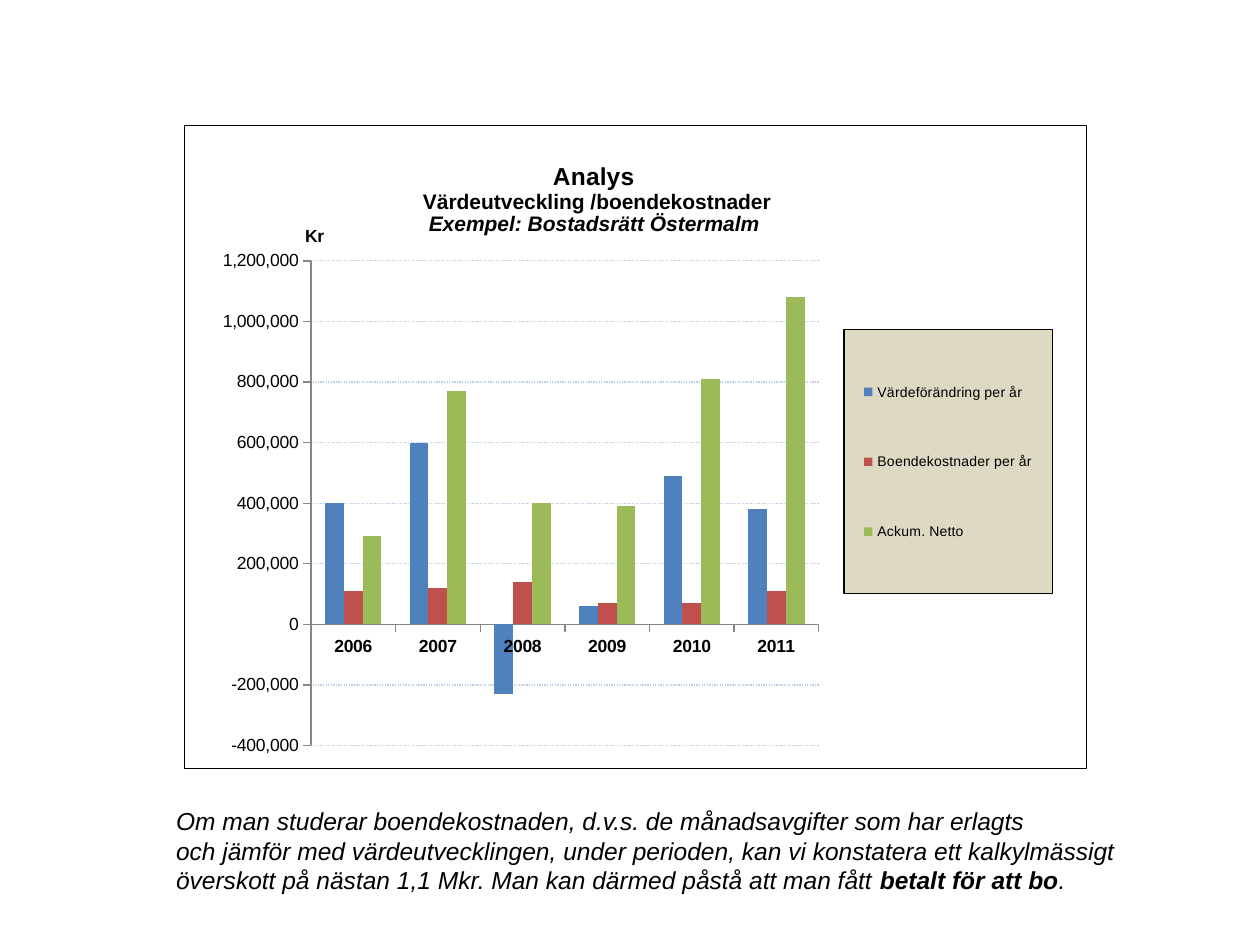
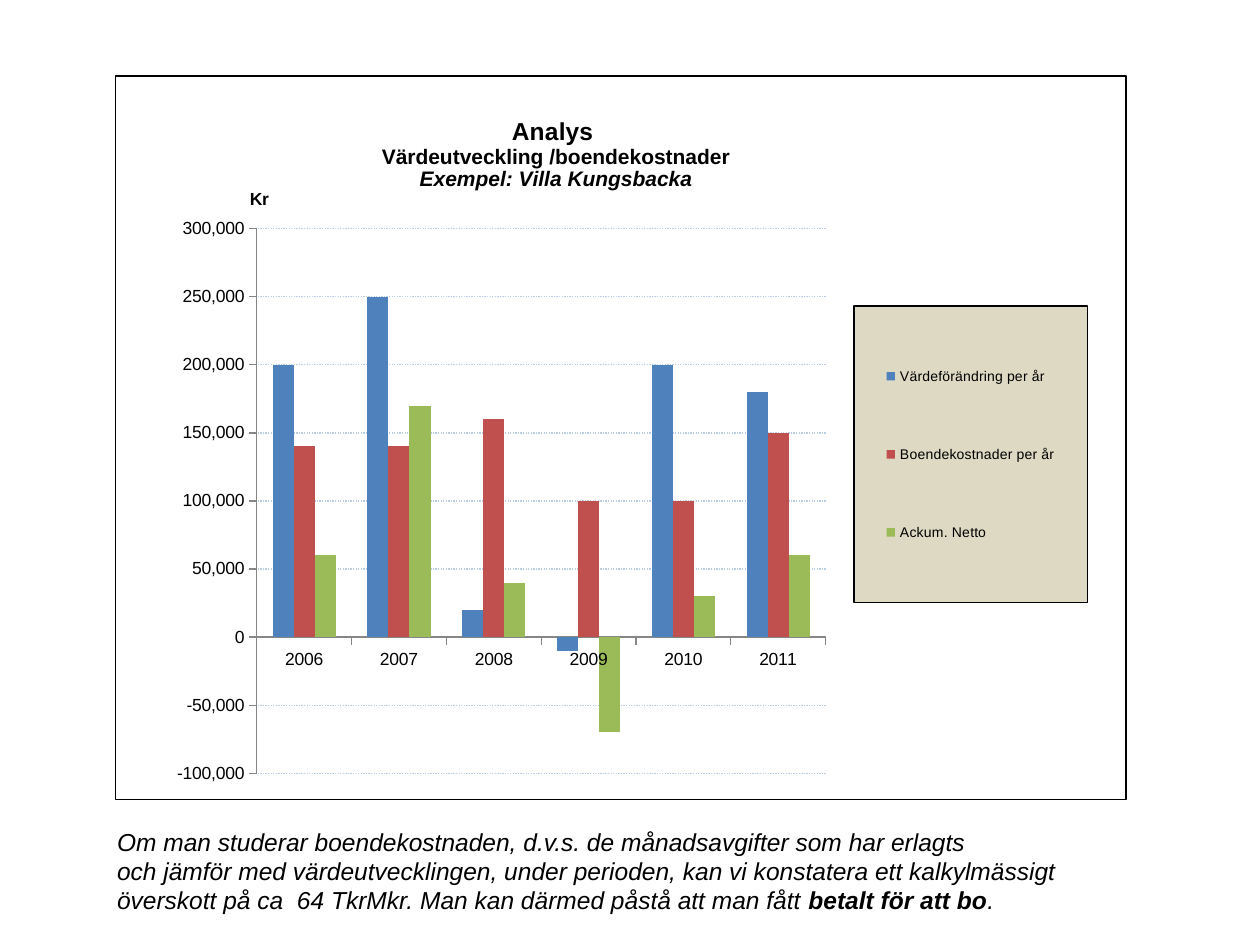
"""Build two slides that compare value growth with housing costs, each a column chart with a caption."""
from lxml import etree
from pptx import Presentation
from pptx.chart.data import CategoryChartData
from pptx.dml.color import RGBColor
from pptx.enum.chart import XL_CHART_TYPE, XL_LEGEND_POSITION, XL_TICK_MARK
from pptx.enum.dml import MSO_LINE
from pptx.enum.text import MSO_AUTO_SIZE
from pptx.oxml import parse_xml
from pptx.oxml.ns import nsdecls, qn
from pptx.util import Cm, Pt

COLUMNS = XL_CHART_TYPE.COLUMN_CLUSTERED
LEGEND_RIGHT = XL_LEGEND_POSITION.RIGHT
TICK_OUTSIDE = XL_TICK_MARK.OUTSIDE
DOTTED = MSO_LINE.ROUND_DOT
GROW = MSO_AUTO_SIZE.SHAPE_TO_FIT_TEXT

BLACK = RGBColor(0x00, 0x00, 0x00)
WHITE = RGBColor(0xFF, 0xFF, 0xFF)
BEIGE = RGBColor(0xDD, 0xD9, 0xC3)
AXIS_GREY = RGBColor(0x86, 0x86, 0x86)
GRID_BLUE = RGBColor(0xB9, 0xCD, 0xE5)
SERIES_COLORS = {
    "Värdeförändring per år": RGBColor(0x4F, 0x81, 0xBD),
    "Boendekostnader per år": RGBColor(0xC0, 0x50, 0x4D),
    "Ackum. Netto ": RGBColor(0x9B, 0xBB, 0x59),
}
FONT = "Arial"
YEARS = ["2006", "2007", "2008", "2009", "2010", "2011"]

ANALYSES = [
    {
        "example": "Exempel: Bostadsrätt Östermalm ",
        "chart_at": (3.71, 2.51, 18.21, 13.0),
        "caption_at": (3.3, 16.13, 19.53, 2.06),
        "caption_wrap": False,
        "surplus": "nästan 1,1 Mkr",
        "years_bold": True,
        "scale": (-400000, 1200000, 200000),
        "values": [
            (400000, 600000, -230000, 60000, 490000, 380000),
            (110000, 120000, 140000, 70000, 70000, 110000),
            (290000, 770000, 400000, 390000, 810000, 1080000),
        ],
    },
    {
        "example": "Exempel: Villa Kungsbacka",
        "chart_at": (2.31, 1.52, 20.4, 14.61),
        "caption_at": (2.11, 16.54, 20.75, 2.06),
        "caption_wrap": True,
        "surplus": "ca  64 TkrMkr",
        "years_bold": False,
        "scale": (-100000, 300000, 50000),
        "values": [
            (200000, 250000, 20000, -10000, 200000, 180000),
            (140000, 140000, 160000, 100000, 100000, 150000),
            (60000, 170000, 40000, -70000, 30000, 60000),
        ],
    },
]


def add_text(para, text, size=14, bold=False, italic=False):
    """Add one formatted span to a paragraph."""
    span = para.add_run()
    span.text = text
    span.font.name = FONT
    span.font.size = Pt(size)
    span.font.bold = bold
    span.font.italic = italic
    span.font.color.rgb = BLACK


def place(part, **fractions):
    """Give a chart part a manual layout in fractions of the chart."""
    for automatic in part.findall(qn("c:layout")):
        part.remove(automatic)
    layout = etree.Element(qn("c:layout"))
    manual = etree.SubElement(layout, qn("c:manualLayout"))
    if "w" in fractions and part.tag == qn("c:plotArea"):
        etree.SubElement(manual, qn("c:layoutTarget")).set("val", "inner")
    for side in ("x", "y"):
        etree.SubElement(manual, qn(f"c:{side}Mode")).set("val", "edge")
    for side, fraction in fractions.items():
        etree.SubElement(manual, qn(f"c:{side}")).set("val", str(fraction))
    leading = [child for child in part if child.tag in (qn("c:tx"), qn("c:legendPos"))]
    part.insert(len(leading), layout)


deck = Presentation()
deck.slide_width, deck.slide_height = Cm(25.4), Cm(19.05)

for analysis in ANALYSES:
    page = deck.slides.add_slide(deck.slide_layouts[6])

    chart_data = CategoryChartData(number_format="#,##0")
    chart_data.categories = YEARS
    for name, values in zip(SERIES_COLORS, analysis["values"]):
        chart_data.add_series(name, values)
    chart_at = [Cm(length) for length in analysis["chart_at"]]
    chart = page.shapes.add_chart(COLUMNS, *chart_at, chart_data).chart
    chart.font.name = FONT
    chart.font.size = Pt(10)
    chart.font.color.rgb = BLACK

    plot = chart.plots[0]
    plot.vary_by_categories = False
    plot.gap_width = 150
    plot.overlap = 0
    for series, color in zip(plot.series, SERIES_COLORS.values()):
        series.invert_if_negative = False
        series.format.fill.solid()
        series.format.fill.fore_color.rgb = color

    title_frame = chart.chart_title.text_frame
    add_text(title_frame.paragraphs[0], "Analys ", bold=True)
    add_text(title_frame.add_paragraph(), "Värdeutveckling /boendekostnader", size=12, bold=True)
    add_text(title_frame.add_paragraph(), analysis["example"], size=12, bold=True, italic=True)

    for axis in (chart.category_axis, chart.value_axis):
        axis.major_tick_mark = TICK_OUTSIDE
        axis.format.line.color.rgb = AXIS_GREY
        axis.format.line.width = Pt(0.75)
    chart.category_axis.tick_labels.font.bold = analysis["years_bold"]

    value_axis = chart.value_axis
    value_axis.minimum_scale, value_axis.maximum_scale, value_axis.major_unit = analysis["scale"]
    value_axis.tick_labels.number_format = "#,##0"
    value_axis.tick_labels.number_format_is_linked = False
    grid_line = value_axis.major_gridlines.format.line
    grid_line.color.rgb = GRID_BLUE
    grid_line.width = Pt(0.75)
    grid_line.dash_style = DOTTED
    unit_frame = value_axis.axis_title.text_frame
    add_text(unit_frame.paragraphs[0], "Kr", size=10, bold=True)
    unit_frame._txBody.bodyPr.set("rot", "0")
    unit_frame._txBody.bodyPr.set("vert", "horz")

    chart.has_legend = True
    chart.legend.position = LEGEND_RIGHT
    chart.legend.include_in_layout = False
    chart.legend.font.name = FONT
    chart.legend.font.size = Pt(8)
    chart.legend.font.color.rgb = BLACK

    chart_root = chart._chartSpace.find(qn("c:chart"))
    plot_area = chart_root.find(qn("c:plotArea"))
    legend = chart_root.find(qn("c:legend"))
    place(chart_root.find(qn("c:title")), x=0.26, y=0.05)
    place(plot_area.find(f"{qn('c:valAx')}/{qn('c:title')}"), x=0.13, y=0.15)
    place(plot_area, x=0.14, y=0.211, w=0.563, h=0.753)
    place(legend, x=0.731, y=0.318, w=0.231, h=0.41)
    for anchor, fill in ((chart_root, WHITE), (legend.find(qn("c:overlay")), BEIGE)):
        anchor.addnext(parse_xml(
            f'<c:spPr {nsdecls("c", "a")}>'
            f'<a:solidFill><a:srgbClr val="{fill}"/></a:solidFill>'
            f'<a:ln w="{Pt(0.75)}"><a:solidFill><a:srgbClr val="{BLACK}"/></a:solidFill></a:ln>'
            "</c:spPr>"
        ))

    caption = page.shapes.add_textbox(*[Cm(length) for length in analysis["caption_at"]])
    caption_frame = caption.text_frame
    caption_frame.word_wrap = analysis["caption_wrap"]
    caption_frame.auto_size = GROW
    add_text(
        caption_frame.paragraphs[0],
        "Om man studerar boendekostnaden, d.v.s. de månadsavgifter som har erlagts",
        italic=True,
    )
    para = caption_frame.add_paragraph()
    add_text(
        para,
        "och jämför med värdeutvecklingen, under perioden, kan vi konstatera ett kalkylmässigt",
        italic=True,
    )
    para.add_line_break()
    add_text(
        para,
        f"överskott på {analysis['surplus']}. Man kan därmed påstå att man fått ",
        italic=True,
    )
    add_text(para, "betalt för att bo", bold=True, italic=True)
    add_text(para, ".", italic=True)

deck.save("out.pptx")
